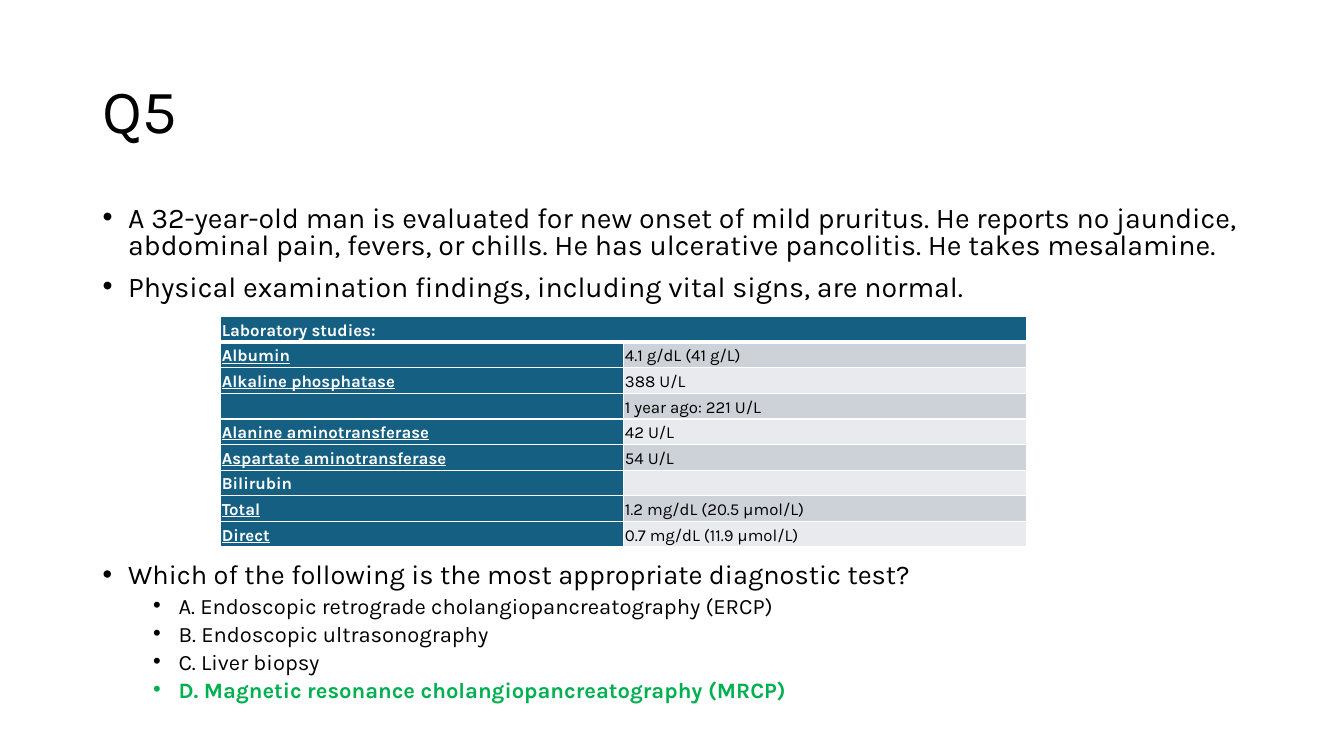
from lxml import etree
from pptx import Presentation
from pptx import util as u
from pptx.dml.color import RGBColor
from pptx.enum import text
from pptx.oxml.ns import qn

FONT = "Karla"
BLACK = RGBColor(0x00, 0x00, 0x00)
WHITE = RGBColor(0xFF, 0xFF, 0xFF)
GREEN = RGBColor(0x00, 0xB0, 0x50)
TEAL = RGBColor(0x15, 0x60, 0x82)
BANDS = [RGBColor(0xCC, 0xD2, 0xD8), RGBColor(0xE8, 0xEA, 0xED)]

MARGIN = 2.34
CONTENT_WIDTH = 29.21
ROW_HEIGHT = 0.62
CELL_SIZE = 12

CASE = [
    "A 32-year-old man is evaluated for new onset of mild pruritus. He reports no jaundice, "
    "abdominal pain, fevers, or chills. He has ulcerative pancolitis. He takes mesalamine.",
    "Physical examination findings, including vital signs, are normal.",
]
LABS = [
    ("Albumin", "4.1 g/dL (41 g/L)"),
    ("Alkaline phosphatase", "388 U/L"),
    ("", "1 year ago: 221 U/L"),
    ("Alanine aminotransferase", "42 U/L"),
    ("Aspartate aminotransferase", "54 U/L"),
    ("Bilirubin", ""),
    ("Total", "1.2 mg/dL (20.5 µmol/L)"),
    ("Direct", "0.7 mg/dL (11.9 µmol/L)"),
]
QUESTION = "Which of the following is the most appropriate diagnostic test?"
OPTIONS = [
    "A. Endoscopic retrograde cholangiopancreatography (ERCP)",
    "B. Endoscopic ultrasonography",
    "C. Liver biopsy",
    "D. Magnetic resonance cholangiopancreatography (MRCP)",
]
ANSWER = OPTIONS[3]


def write(para, words, size, color=BLACK, bold=False, underline=False,
          spacing=0.8, before=0, after=0, indent=None):
    para.line_spacing = spacing
    para.space_before = u.Pt(before)
    para.space_after = u.Pt(after)
    if indent is not None:
        properties = para._p.get_or_add_pPr()
        properties.set("marL", str(u.Cm(indent)))
        properties.set("indent", str(-u.Cm(0.64)))
        etree.SubElement(properties, qn("a:buFont"), typeface="Arial")
        etree.SubElement(properties, qn("a:buChar"), char="•")
    if not words:
        etree.SubElement(para._p, qn("a:endParaRPr"), sz=str(size * 100))
        return
    span = para.add_run()
    span.text = words
    span.font.name = FONT
    span.font.size = u.Pt(size)
    span.font.bold = bold
    span.font.underline = underline
    span.font.color.rgb = color


def add_box(page, left, top, width, height):
    frame = page.shapes.add_textbox(u.Cm(left), u.Cm(top), u.Cm(width), u.Cm(height)).text_frame
    frame.word_wrap = True
    return frame


def add_title(page, left, top, width, height):
    frame = add_box(page, left, top, width, height)
    frame.vertical_anchor = text.MSO_ANCHOR.MIDDLE
    write(frame.paragraphs[0], "Q5", 44, spacing=0.9)


def add_case(page, left, top, width, height):
    frame = add_box(page, left, top, width, height)
    write(frame.paragraphs[0], CASE[0], 20.4, indent=0.64)
    write(frame.add_paragraph(), CASE[1], 20.4, indent=0.64, before=10)


def add_question(page, left, top, width, height):
    frame = add_box(page, left, top, width, height)
    write(frame.paragraphs[0], QUESTION, 19.4, indent=0.64)
    for option in OPTIONS:
        right = option == ANSWER
        write(frame.add_paragraph(), option, 15.7, GREEN if right else BLACK,
              bold=right, indent=1.91, before=5)


def style_cell(cell, fill, words, borders, **style):
    cell.margin_left = cell.margin_right = u.Cm(0.03)
    cell.margin_top = cell.margin_bottom = u.Cm(0.03)
    properties = cell._tc.get_or_add_tcPr()
    for side, weight in borders.items():
        line = etree.SubElement(properties, qn("a:ln" + side), w=str(u.Pt(weight)))
        paint = etree.SubElement(line, qn("a:solidFill"))
        etree.SubElement(paint, qn("a:srgbClr"), val=str(WHITE))
    cell.fill.solid()
    cell.fill.fore_color.rgb = fill
    write(cell.text_frame.paragraphs[0], words, CELL_SIZE, spacing=1.15, after=8, **style)


def add_labs(page, left, top, width):
    count = len(LABS) + 1
    table = page.shapes.add_table(count, 2, u.Cm(left), u.Cm(top), u.Cm(width),
                                  u.Cm(ROW_HEIGHT * count)).table
    for column in table.columns:
        column.width = u.Cm(width / 2)
    for row in table.rows:
        row.height = u.Cm(ROW_HEIGHT)
    thin = {"L": 1, "R": 1, "T": 1, "B": 1}
    table.cell(0, 0).merge(table.cell(0, 1))
    for column, words in enumerate(["Laboratory studies:", ""]):
        style_cell(table.cell(0, column), TEAL, words, {**thin, "B": 3}, color=WHITE, bold=True)
    table.cell(0, 0).vertical_anchor = text.MSO_ANCHOR.MIDDLE
    for number, (name, value) in enumerate(LABS, 1):
        borders = {**thin, "T": 3 if number == 1 else 1}
        style_cell(table.cell(number, 0), TEAL, name, borders,
                   color=WHITE, bold=True, underline=name != "Bilirubin")
        style_cell(table.cell(number, 1), BANDS[(number - 1) % 2], value, borders)


def build_question_slide(deck):
    page = deck.slides.add_slide(deck.slide_layouts[6])
    add_title(page, MARGIN, 1.02, CONTENT_WIDTH, 3.68)
    add_case(page, MARGIN, 5.08, CONTENT_WIDTH, 2.7)
    add_labs(page, 5.56, 7.98, 20.32)
    add_question(page, MARGIN, 14.09, CONTENT_WIDTH, 4.4)


def main():
    deck = Presentation()
    deck.slide_width = u.Cm(33.87)
    deck.slide_height = u.Cm(19.05)
    build_question_slide(deck)
    deck.save("out.pptx")


if __name__ == "__main__":
    main()
